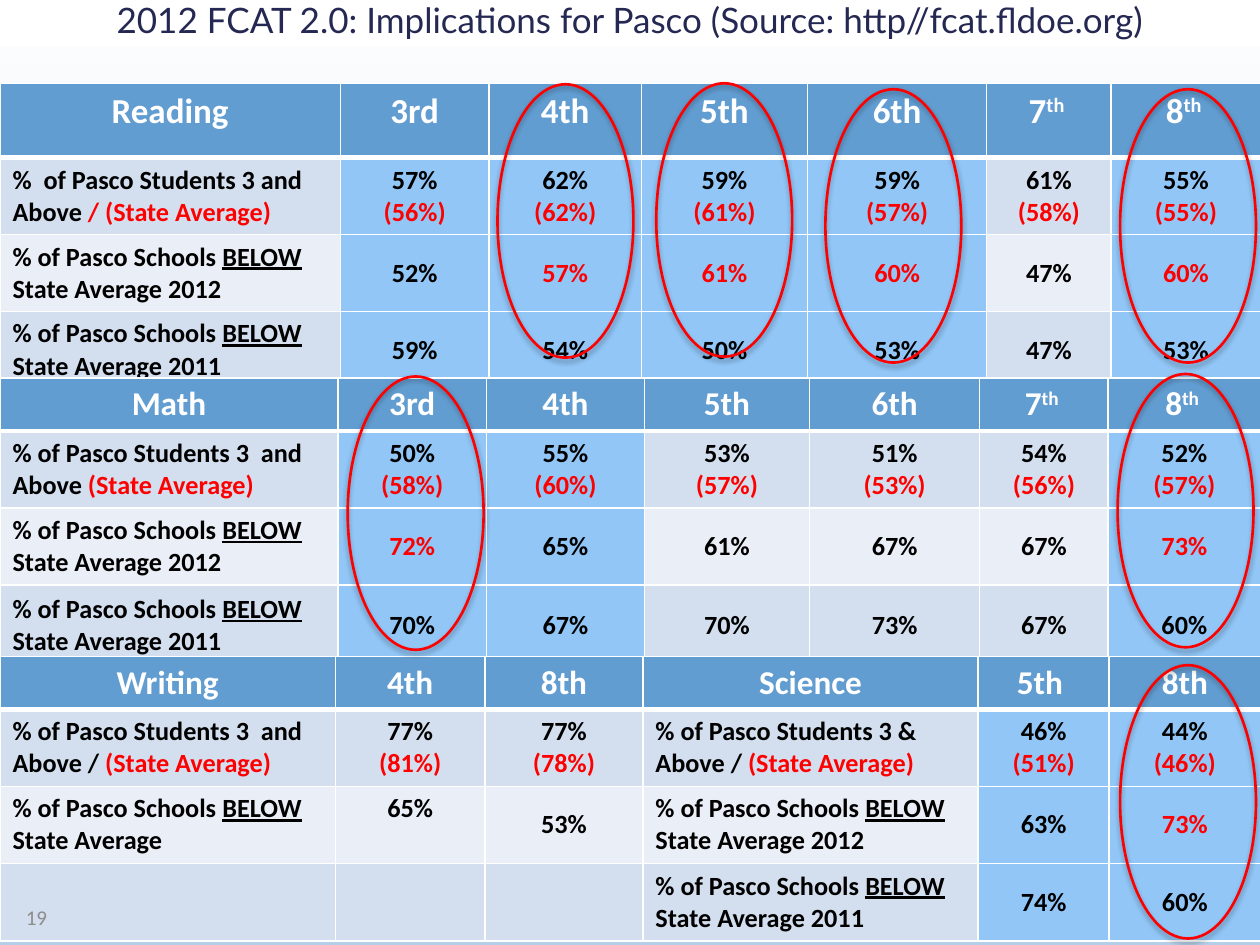
from lxml import etree
from pptx import Presentation
from pptx import util as u
from pptx.dml.color import RGBColor
from pptx.enum import shapes, text
from pptx.oxml import parse_xml
from pptx.oxml.ns import nsdecls, qn

COLORS = {"white": "FFFFFF", "sky": "B4D0E9", "title": "242852", "header": "629DD1",
          "odd": "D3DFEE", "even": "EAEFF7", "focus": "91C6F7",
          "black": "000000", "red": "FF0000", "number": "8C8C8C"}
TITLE = "2012 FCAT 2.0: Implications for Pasco (Source: http//fcat.fldoe.org)"
BELOW_2012 = "% of Pasco Schools |_BELOW |State Average 2012"
BELOW_2011 = "% of Pasco Schools |_BELOW |State Average 2011"
GRADES = ["3rd", "4th", "5th", "6th", "7|^th ", "8|^th "]

# Markup in cells: | separates runs, * is red, _ is underlined, ^ is superscript.
TABLES = [
    {"top": 1.68, "header_size": 20, "focus": {1, 2, 3, 4, 6},
     "columns": [6.86, 3, 3.07, 3.35, 3.61, 2.51, 3.02], "heights": [1.5, 1.52, 1.52, 1.55],
     "rows": [
         ["Reading"] + GRADES,
         ["%  of Pasco Students 3 and Above |*/ (State Average)", "57%\n*(56%)", "62%\n*(62%)",
          "59%\n*(61%)", "59%\n*(57%)", "61%\n*(58%)", "55%\n*(55%)"],
         [BELOW_2012, "52%", "*57%", "*61%", "*60%", "47%", "*60%"],
         [BELOW_2011, "59%", "54%", "50%", "53%", "47%", "53%"]]},
    {"top": 7.62, "header_size": 19, "focus": {1, 2, 6},
     "columns": [6.81, 3, 3.18, 3.33, 3.43, 2.59, 3.07], "heights": [1.07, 1.52, 1.52, 1.63],
     "rows": [
         ["Math"] + GRADES,
         ["% of Pasco Students 3  and Above |*(State Average)", "50%\n*(58%)", "55%\n*(60%)",
          "53%\n*(57%)", "51%\n*(53%)", "54%\n*(56%)", "52%\n*(57%)"],
         [BELOW_2012, "*72%", "65%", "61%", "67%", "67%", "*73%"],
         [BELOW_2011, "70%", "67%", "70%", "73%", "67%", "60%"]]},
    {"top": 13.23, "header_size": 19, "focus": {4, 5}, "raised": (2, 1),
     "columns": [6.76, 3.02, 3.18, 6.76, 2.64, 3.05], "heights": [1.07, 1.52, 1.52, 1.57],
     "rows": [
         ["Writing", "4th", "8th", "Science", "5th ", "8th"],
         ["% of Pasco Students 3  and Above / |*(State Average)", "77%\n*(81%)", "77%\n*(78%)",
          "% of Pasco Students 3 & Above / |*(State Average)", "46%\n*(51%)", "44%\n*(46%)"],
         ["% of Pasco Schools |_BELOW| State Average", "65%", "53%", BELOW_2012, "63%", "*73%"],
         ["", "", "", BELOW_2011, "74%", "60%"]]},
]
RINGS = [(10.03, 1.7), (13.23, 1.68), (22.53, 7.54), (7.01, 7.59),
         (22.58, 13.41), (22.58, 1.8), (16.64, 1.8)]


def rgb(name):
    return RGBColor.from_string(COLORS[name])


def set_font(paragraph, family, size, color, bold=False):
    font = paragraph.font
    font.name, font.size, font.bold = family, u.Pt(size), bold
    font.color.rgb = rgb(color)


def write_cell(cell, content, size, color, align):
    for index, line in enumerate(content.split("\n")):
        paragraph = cell.text_frame.paragraphs[0] if index == 0 else cell.text_frame.add_paragraph()
        paragraph.alignment = align
        set_font(paragraph, "Calibri", size, color, True)
        for piece in filter(None, line.split("|")):
            run = paragraph.add_run()
            run.text = piece.lstrip("*_^")
            if piece[0] == "*":
                run.font.color.rgb = rgb("red")
            elif piece[0] == "_":
                run.font.underline = True
            elif piece[0] == "^":
                run.font._element.set("baseline", "30000")


def set_borders(cell, row):
    heavy = {0: "B", 1: "T"}.get(row)
    for side in "LRTB":
        line = etree.SubElement(cell._tc.get_or_add_tcPr(), qn(f"a:ln{side}"),
                                w=str(u.Pt(3 if side == heavy else 1)))
        fill = etree.SubElement(line, qn("a:solidFill"))
        etree.SubElement(fill, qn("a:srgbClr"), val=COLORS["white"])


def add_scores(slide, scores):
    rows, columns, heights = scores["rows"], scores["columns"], scores["heights"]
    table = slide.shapes.add_table(len(rows), len(columns), 0, u.Cm(scores["top"]),
                                   u.Cm(sum(columns)), u.Cm(sum(heights))).table
    for column, width in zip(table.columns, columns):
        column.width = u.Cm(width)
    for r, (contents, height) in enumerate(zip(rows, heights)):
        table.rows[r].height = u.Cm(height)
        for c, content in enumerate(contents):
            cell = table.cell(r, c)
            set_borders(cell, r)
            band = "header" if r == 0 else "focus" if c in scores["focus"] else "odd" if r % 2 else "even"
            cell.fill.solid()
            cell.fill.fore_color.rgb = rgb(band)
            top = r == 0 or (r, c) == scores.get("raised")
            cell.vertical_anchor = text.MSO_ANCHOR.TOP if top else text.MSO_ANCHOR.MIDDLE
            label = r > 0 and content.startswith("%")
            write_cell(cell, content, 15 if r else scores["header_size"], "black" if r else "white",
                       text.PP_ALIGN.LEFT if label else text.PP_ALIGN.CENTER)


def add_ring(slide, left, top):
    ring = slide.shapes.add_shape(shapes.MSO_SHAPE.OVAL, u.Cm(left), u.Cm(top), u.Cm(2.74), u.Cm(5.51))
    ring.fill.background()
    ring.line.color.rgb = rgb("red")
    ring.line.width = u.Pt(1.5)
    ring.shadow.inherit = False
    ring._element.spPr.find(qn("a:effectLst")).append(parse_xml(
        f'<a:outerShdw {nsdecls("a")} blurRad="{u.Pt(3.1)}" dist="{u.Pt(1.8)}" dir="5400000" '
        f'rotWithShape="0"><a:srgbClr val="{COLORS["black"]}"><a:alpha val="35000"/>'
        '</a:srgbClr></a:outerShdw>'))


def main():
    deck = Presentation()
    deck.slide_width, deck.slide_height = u.Cm(25.4), u.Cm(19.05)
    slide = deck.slides.add_slide(deck.slide_layouts[5])

    sky = slide.background.fill
    sky.gradient()
    sky.gradient_angle = 270
    for stop, color, position in zip(sky.gradient_stops, ("white", "sky"), (0, 0.85)):
        stop.color.rgb = rgb(color)
        stop.position = position

    title = slide.shapes.title
    title.left, title.top, title.width, title.height = 0, u.Cm(-1.68), u.Cm(25.4), u.Cm(2.62)
    title.fill.solid()
    title.fill.fore_color.rgb = rgb("white")
    title.text_frame.text = TITLE
    title.text_frame.vertical_anchor = text.MSO_ANCHOR.BOTTOM
    title.text_frame.paragraphs[0].alignment = text.PP_ALIGN.CENTER
    set_font(title.text_frame.paragraphs[0], "Lato", 20, "title")

    for scores in TABLES:
        add_scores(slide, scores)
    for left, top in RINGS:
        add_ring(slide, left, top)

    number = slide.shapes.add_textbox(u.Cm(0.08), u.Cm(17.98), u.Cm(1.12), u.Cm(1.02)).text_frame
    number.word_wrap = True
    number.vertical_anchor = text.MSO_ANCHOR.MIDDLE
    number.text = "19"
    number.paragraphs[0].alignment = text.PP_ALIGN.RIGHT
    set_font(number.paragraphs[0], "Calibri", 12, "number")

    deck.save("out.pptx")


if __name__ == "__main__":
    main()
